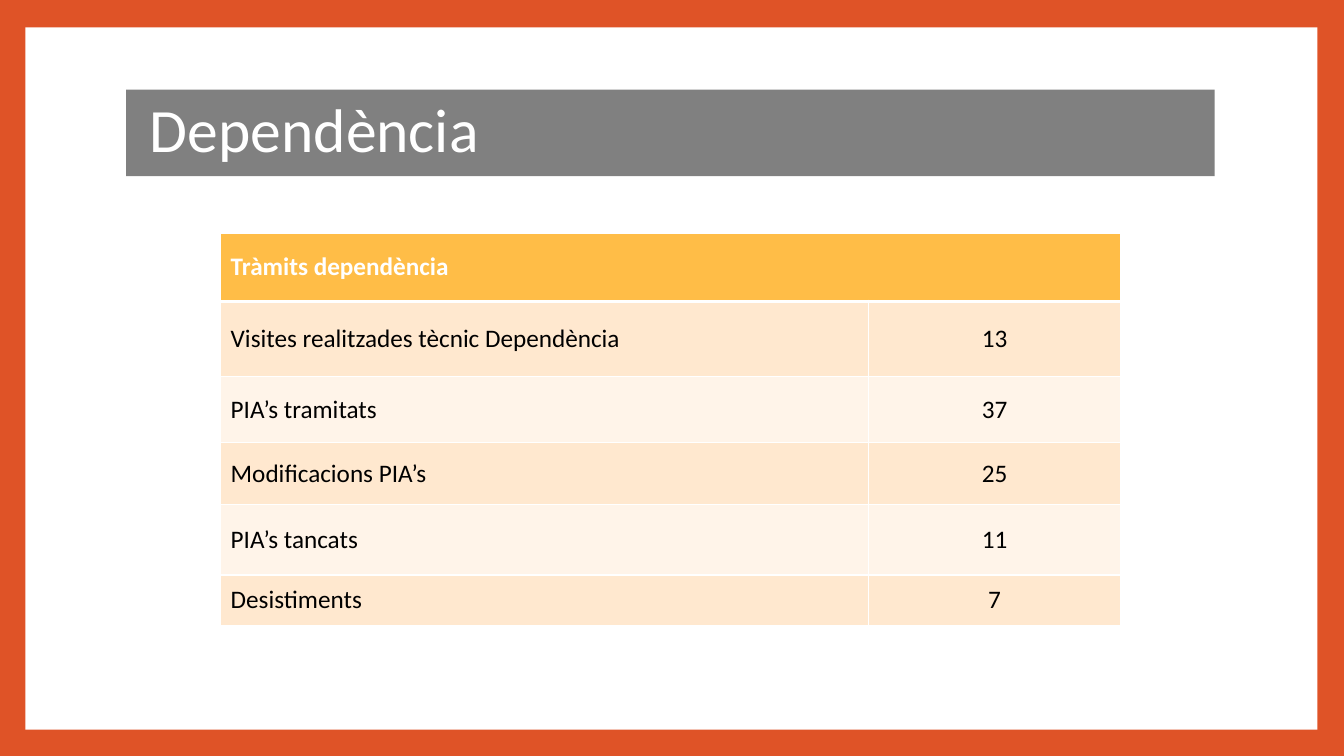
from lxml.etree import SubElement
from pptx import Presentation
from pptx.dml.color import RGBColor
from pptx.enum.shapes import MSO_SHAPE as Preset
from pptx.enum.text import MSO_ANCHOR as Anchor, PP_ALIGN as Align
from pptx.oxml.ns import qn
from pptx.util import Cm, Pt

ORANGE, GREY, WHITE, BLACK = "DF5327", "808080", "FFFFFF", "000000"
HEADER_FILL = "FFBD47"
BAND_FILLS = ("FFE8CF", "FFF4E9")
COLUMN_WIDTHS = (16.33, 6.35)
ROW_HEIGHTS = (1.73, 1.88, 1.68, 1.55, 1.78, 1.27)
PROCEDURES = (
    ("Tràmits dependència", ""),
    ("Visites realitzades tècnic Dependència", "13"),
    ("PIA’s tramitats", "37"),
    ("Modificacions PIA’s", "25"),
    ("PIA’s tancats", "11"),
    ("Desistiments", "7"),
)


def paint(fill, color):
    fill.solid()
    fill.fore_color.rgb = RGBColor.from_string(color)


def apply_format(target, values):
    for attribute, value in values.items():
        setattr(target, attribute, value)


def write(frame, text, color, align=Align.LEFT, **font_values):
    paragraph = frame.paragraphs[0]
    paragraph.alignment = align
    run = paragraph.add_run()
    run.text = text
    apply_format(run.font, {"name": "Calibri", **font_values})
    paint(run.font.fill, color)
    return paragraph


def add_panel(slide, box, color):
    panel = slide.shapes.add_shape(Preset.RECTANGLE, *map(Cm, box))
    panel.shadow.inherit = False
    panel.line.fill.background()
    paint(panel.fill, color)
    return panel


def add_title(slide, text):
    banner = add_panel(slide, (3.18, 2.26, 27.43, 2.18), GREY)
    apply_format(banner.text_frame, {
        "word_wrap": True,
        "vertical_anchor": Anchor.MIDDLE,
        "margin_left": Cm(0.6),
    })
    heading = write(banner.text_frame, text, WHITE, size=Pt(44))
    heading.line_spacing = 0.9


def add_borders(cell, widths):
    properties = cell._tc.get_or_add_tcPr()
    for side, width in widths.items():
        border = SubElement(properties, qn(f"a:ln{side}"), w=str(Pt(width)))
        solid = SubElement(border, qn("a:solidFill"))
        SubElement(solid, qn("a:srgbClr"), val=WHITE)


def add_procedures_table(slide):
    box = (5.56, 5.87, sum(COLUMN_WIDTHS), sum(ROW_HEIGHTS))
    table = slide.shapes.add_table(
        len(ROW_HEIGHTS), len(COLUMN_WIDTHS), *map(Cm, box)).table
    for column, width in zip(table.columns, COLUMN_WIDTHS):
        column.width = Cm(width)
    for index, (procedure, height) in enumerate(zip(PROCEDURES, ROW_HEIGHTS)):
        header = index == 0
        table.rows[index].height = Cm(height)
        fill = HEADER_FILL if header else BAND_FILLS[(index - 1) % 2]
        borders = {"L": 1, "R": 1, "T": 3 if index == 1 else 1,
                   "B": 3 if header else 1}
        for position, text in enumerate(procedure):
            cell = table.cell(index, position)
            cell.vertical_anchor = Anchor.MIDDLE
            add_borders(cell, borders)
            paint(cell.fill, fill)
            if text:
                write(cell.text_frame, text, WHITE if header else BLACK,
                      Align.CENTER if position else Align.LEFT,
                      size=Pt(18), bold=header)
    table.cell(0, 0).merge(table.cell(0, 1))


def main():
    deck = Presentation()
    apply_format(deck, {"slide_width": Cm(33.87), "slide_height": Cm(19.05)})
    slide = deck.slides.add_slide(deck.slide_layouts[6])
    paint(slide.background.fill, ORANGE)
    add_panel(slide, (0.64, 0.69, 32.56, 17.7), WHITE)
    add_title(slide, "Dependència")
    add_procedures_table(slide)
    deck.save("out.pptx")


if __name__ == "__main__":
    main()
